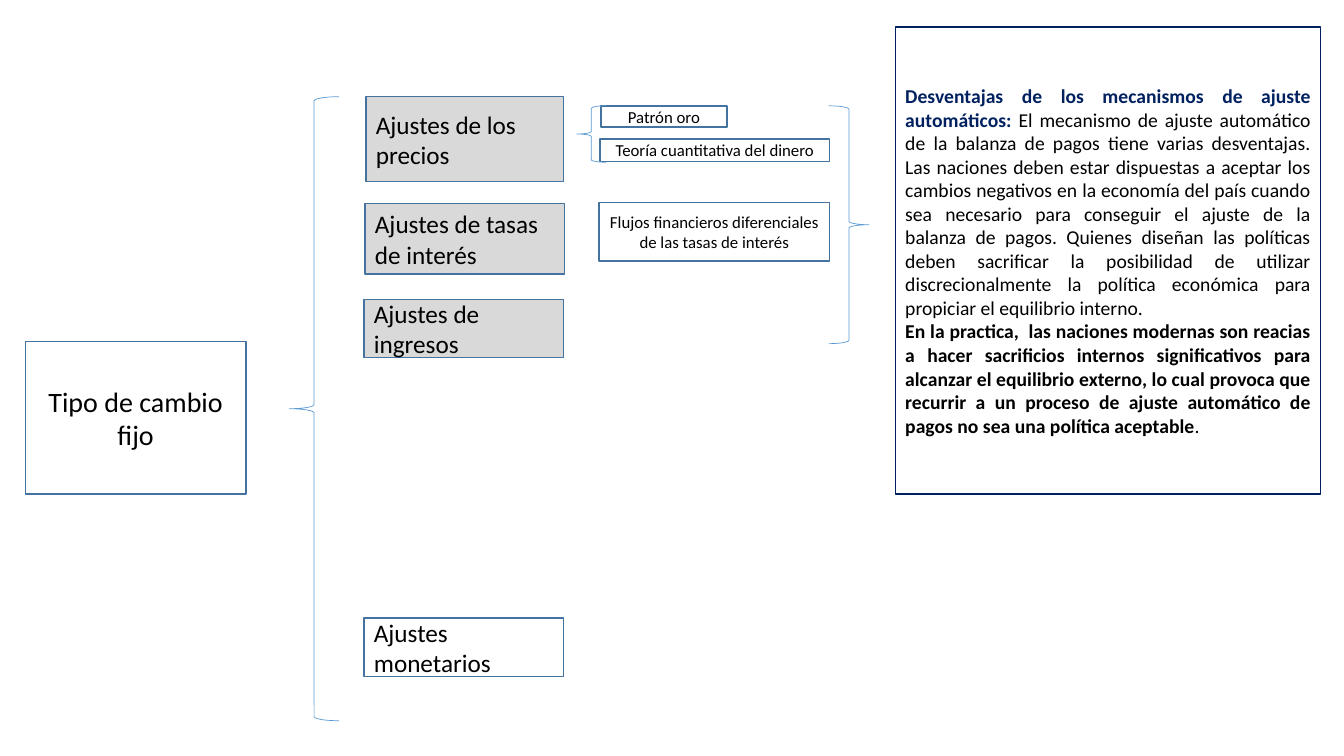
import pptx
import pptx.util
import pptx.dml.color
import pptx.enum.shapes
import pptx.enum.text

Inches = pptx.util.Inches
Pt = pptx.util.Pt
SHAPES = pptx.enum.shapes.MSO_SHAPE
ALIGN = pptx.enum.text.PP_ALIGN

BLACK, WHITE, GRAY = "000000", "FFFFFF", "D9D9D9"
NAVY, STEEL, BLUE = "002060", "43739E", "5B9BD5"


def color(value):
    return pptx.dml.color.RGBColor.from_string(value)


def add_box(text, place, size=18, fill=WHITE, line=STEEL, align=ALIGN.LEFT):
    """Text is a list of paragraphs, each a list of (words, bold, colour) runs,
    or a plain string."""
    shape = slide.shapes.add_shape(SHAPES.RECTANGLE, *map(Inches, place))
    shape.shadow.inherit = False
    shape.fill.solid()
    shape.fill.fore_color.rgb = color(fill)
    shape.line.color.rgb = color(line)
    shape.line.width = Pt(1)
    frame = shape.text_frame
    frame.word_wrap = True
    frame.vertical_anchor = pptx.enum.text.MSO_ANCHOR.MIDDLE
    paragraphs = [[(text, False, BLACK)]] if isinstance(text, str) else text
    for index, runs in enumerate(paragraphs):
        paragraph = frame.add_paragraph() if index else frame.paragraphs[0]
        paragraph.alignment = align
        for words, bold, ink in runs:
            run = paragraph.add_run()
            run.text = words
            run.font.name = "Calibri"
            run.font.size = Pt(size)
            run.font.bold = bold
            run.font.color.rgb = color(ink)


presentation = pptx.Presentation()
presentation.slide_width = Inches(13.33)
presentation.slide_height = Inches(7.5)
slide = presentation.slides.add_slide(presentation.slide_layouts[6])

# Root topic
add_box("Tipo de cambio fijo", (0.25, 3.39, 2.19, 1.51), size=20, align=ALIGN.CENTER)

# Adjustment mechanisms
for text, place, fill in [
    ("Ajustes de los precios", (3.63, 0.96, 1.96, 0.84), GRAY),
    ("Ajustes de tasas de interés", (3.62, 2.02, 1.98, 0.7), GRAY),
    ("Ajustes de ingresos", (3.61, 2.97, 1.98, 0.58), GRAY),
    ("Ajustes monetarios", (3.61, 6.13, 1.98, 0.58), WHITE),
]:
    add_box(text, place, fill=fill)

# Details of the mechanisms
for text, place in [
    ("Patrón oro", (5.96, 1.05, 1.25, 0.21)),
    ("Teoría cuantitativa del dinero", (5.95, 1.38, 2.28, 0.22)),
    ("Flujos financieros diferenciales de las tasas de interés", (5.94, 2.01, 2.29, 0.58)),
]:
    add_box(text, place, size=12, align=ALIGN.CENTER)

# Disadvantages
disadvantages = [
    [
        ("Desventajas de los mecanismos de ajuste automáticos: ", True, NAVY),
        ("El mecanismo de ajuste automático de la balanza de pagos tiene varias "
         "desventajas. Las naciones deben estar dispuestas a aceptar los cambios "
         "negativos en la economía del país cuando sea necesario para conseguir el "
         "ajuste de la balanza de pagos. Quienes diseñan las políticas deben "
         "sacrificar la posibilidad de utilizar discrecionalmente la política "
         "económica para propiciar el equilibrio interno.", False, BLACK),
    ],
    [
        ("En la practica,  las naciones modernas son reacias a hacer sacrificios "
         "internos significativos para alcanzar el equilibrio externo, lo cual "
         "provoca que recurrir a un proceso de ajuste automático de pagos no sea "
         "una política aceptable", True, BLACK),
        (". ", False, BLACK),
    ],
]
add_box(disadvantages, (8.88, 0.27, 4.22, 4.63), size=14, line=NAVY, align=ALIGN.JUSTIFY)

# Braces
for kind, place in [
    (SHAPES.LEFT_BRACE, (2.87, 0.96, 0.49, 6.19)),
    (SHAPES.RIGHT_BRACE, (8.22, 1.05, 0.4, 2.36)),
    (SHAPES.LEFT_BRACE, (5.72, 1.05, 0.29, 0.56)),
]:
    brace = slide.shapes.add_shape(kind, *map(Inches, place))
    brace.shadow.inherit = False
    brace.fill.background()
    brace.line.color.rgb = color(BLUE)
    brace.line.width = Pt(0.5)

presentation.save("out.pptx")
